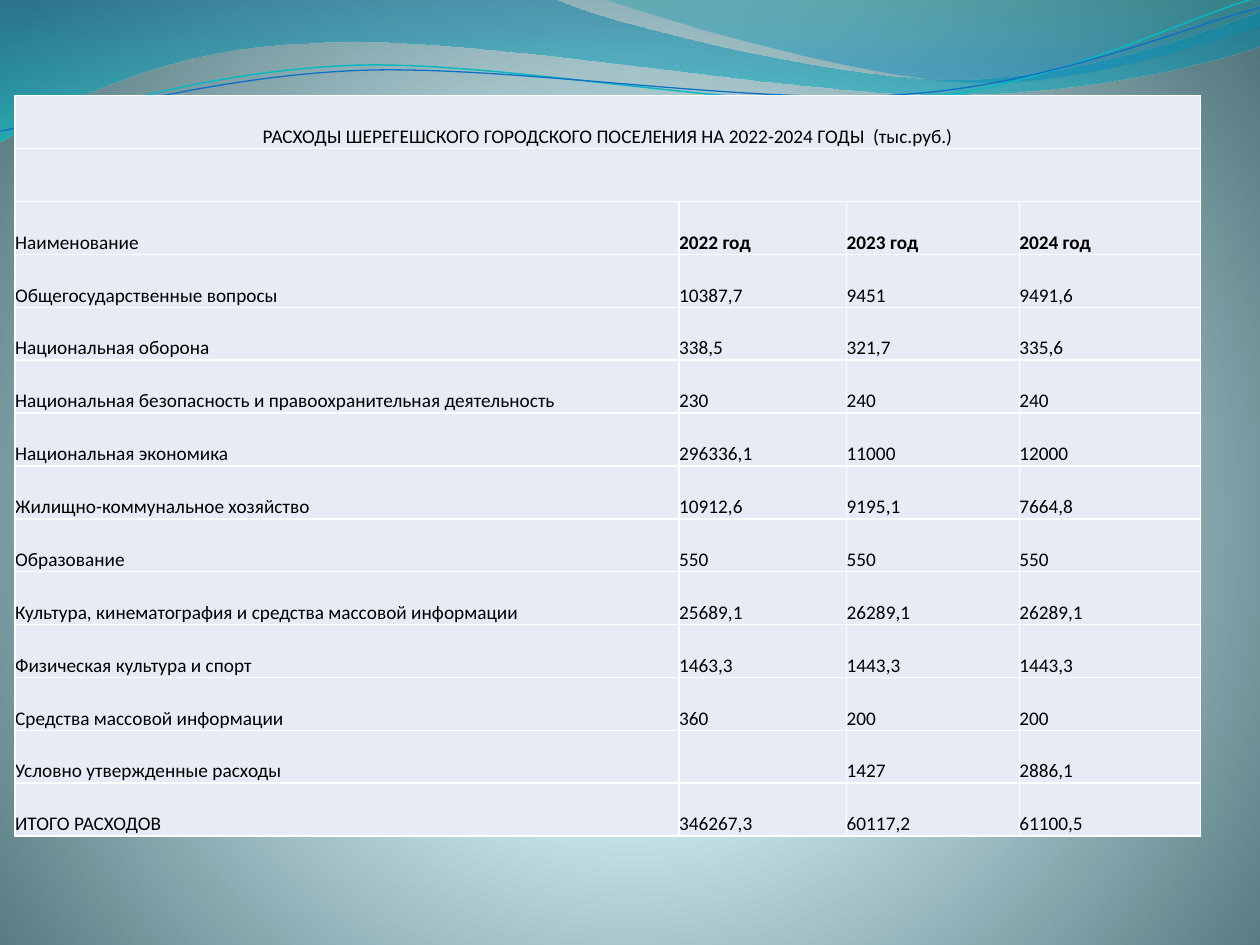
from dataclasses import dataclass
from math import cos, radians, sin
from typing import Optional

from lxml.etree import SubElement
from pptx import Presentation
from pptx.dml.color import RGBColor
from pptx.enum.text import MSO_ANCHOR, PP_ALIGN
from pptx.oxml.ns import qn
from pptx.util import Inches, Pt


@dataclass(frozen=True)
class Theme:
    font: str = "Calibri"
    size: float = 11
    ink: str = "000000"
    cell: str = "E7EBF5"
    rule: str = "FFFFFF"
    rule_width: float = 1
    # Gradient stops: position, colour, opacity (percent)
    back: tuple = ((0, "DEFBFF", 100), (25, "DDFAFF", 100), (100, "52767C", 100))
    swell: tuple = ((0, "0074A1", 45), (100, "00C6CF", 55))
    crest: tuple = ((0, "00A1A9", 30), (80, "008BBF", 45))
    teal: str = "0AB8BF"
    blue: str = "0F6FC6"


THEME = Theme()


@dataclass(frozen=True)
class Wave:
    """Start point, then steps: 2 numbers for a line, 6 for a Bezier curve."""
    start: tuple
    steps: tuple
    stops: tuple = ()
    line: Optional[str] = None
    width: float = 0
    turn: float = 0
    pivot: tuple = (0, 0)


FILLS = (
    Wave((0, 0), (
        (4.4, -0.01), (4.76, 0.17, 6.64, 0.63, 7.58, 0.63),
        (8.53, 0.63, 9.58, 0.26, 10, 0.09), (10.01, 0.36),
        (9.83, 0.44, 8.7, 0.76, 7.46, 0.75), (6.22, 0.75, 3.82, 0.28, 2.57, 0.34),
        (1.29, 0.36, 0.46, 0.83, -0.01, 1.13), (0, 0)), THEME.swell),
    Wave((4.79, -0.01), (
        (5.09, 0.11, 6.82, 0.62, 7.69, 0.65), (8.56, 0.69, 9.61, 0.32, 10, 0.21),
        (10, 0), (4.79, -0.01)), THEME.crest),
)
LINES = (
    Wave((0, 1.11), (
        (0.48, 0.93, 1.58, 0.57, 2.77, 0.52), (3.95, 0.47, 5.93, 0.89, 7.13, 0.8),
        (8.33, 0.71, 9.38, 0.15, 9.98, -0.02)),
        line=THEME.teal, width=0.85, turn=-2.7, pivot=(4.99, 0.57)),
    Wave((0, 1.04), (
        (0.47, 0.96, 1.64, 0.61, 2.83, 0.56), (4.03, 0.51, 5.97, 0.84, 7.17, 0.75),
        (8.36, 0.67, 9.41, 0.21, 10, 0.06)),
        line=THEME.blue, width=0.75, turn=-2.7, pivot=(5, 0.59)),
)

TITLE = "РАСХОДЫ ШЕРЕГЕШСКОГО ГОРОДСКОГО ПОСЕЛЕНИЯ НА 2022-2024 ГОДЫ  (тыс.руб.)"
HEAD = ("Наименование", "2022 год", "2023 год", "2024 год")
COSTS = (
    ("Общегосударственные вопросы", "10387,7", "9451", "9491,6"),
    ("Национальная оборона", "338,5", "321,7", "335,6"),
    ("Национальная безопасность и правоохранительная деятельность", "230", "240", "240"),
    ("Национальная экономика", "296336,1", "11000", "12000"),
    ("Жилищно-коммунальное хозяйство", "10912,6", "9195,1", "7664,8"),
    ("Образование", "550", "550", "550"),
    ("Культура, кинематография и средства массовой информации",
     "25689,1", "26289,1", "26289,1"),
    ("Физическая культура и спорт", "1463,3", "1443,3", "1443,3"),
    ("Средства массовой информации", "360", "200", "200"),
    ("Условно утвержденные расходы", "", "1427", "2886,1"),
    ("ИТОГО РАСХОДОВ", "346267,3", "60117,2", "61100,5"),
)
COLS = (5.27, 1.33, 1.37, 1.44)
ROW = 0.42


def shade(owner, stops: tuple, radial: bool = False) -> None:
    """Fill the slide background or a shape with a gradient."""
    owner.fill.gradient()
    grad = owner.fill._xPr.find(qn("a:gradFill"))
    grad.clear()
    grad.set("rotWithShape", "1")
    items = SubElement(grad, qn("a:gsLst"))
    for pos, tint, alpha in stops:
        stop = SubElement(items, qn("a:gs"), pos=str(pos * 1000))
        color = SubElement(stop, qn("a:srgbClr"), val=tint)
        if alpha < 100:
            SubElement(color, qn("a:alpha"), val=str(alpha * 1000))
    if radial:
        ring = SubElement(grad, qn("a:path"))
        ring.set("path", "circle")
        SubElement(ring, qn("a:fillToRect"), l="10000", t="110000", r="10000", b="100000")
    else:
        SubElement(grad, qn("a:lin"), ang="5400000", scaled="1")


def place(wave: Wave, step: tuple) -> list:
    """Give the points of a step in EMU, with the turn of the wave undone."""
    a, (cx, cy) = radians(-wave.turn), wave.pivot
    spots = []
    for x, y in zip(step[::2], step[1::2]):
        dx, dy = x - cx, y - cy
        spots.append((Inches(cx + dx * cos(a) - dy * sin(a)),
                      Inches(cy + dx * sin(a) + dy * cos(a))))
    return spots


def draw(shapes, wave: Wave) -> None:
    start = place(wave, wave.start)[0]
    steps = [place(wave, step) for step in wave.steps]
    pen = shapes.build_freeform(*start)
    pen.add_line_segments([step[-1] for step in steps], close=bool(wave.stops))
    shape = pen.convert_to_shape()
    # Bend the segments that have control points
    left, top = shape.left, shape.top
    for node, step in zip(list(shape._element.iter(qn("a:lnTo"))), steps):
        if len(step) == 3:
            node.tag = qn("a:cubicBezTo")
            node.clear()
            for x, y in step:
                SubElement(node, qn("a:pt"), x=str(x - left), y=str(y - top))
    shape.rotation = wave.turn
    shape.shadow.inherit = False
    if wave.stops:
        shade(shape, wave.stops)
        shape.line.fill.background()
    else:
        shape.fill.background()
        shape.line.color.rgb = RGBColor.from_string(wave.line)
        shape.line.width = Pt(wave.width)


def write(cell, text: str, *, bold: bool = False, align=PP_ALIGN.LEFT) -> None:
    cell.vertical_anchor = MSO_ANCHOR.BOTTOM
    if not text:
        return
    para = cell.text_frame.paragraphs[0]
    para.alignment = align
    run = para.add_run()
    run.text = text
    run.font.name, run.font.size, run.font.bold = THEME.font, Pt(THEME.size), bold
    run.font.color.rgb = RGBColor.from_string(THEME.ink)


def dress(cell) -> None:
    """Set the margins, borders and fill of a cell."""
    cell.margin_left = cell.margin_right = cell.margin_top = cell.margin_bottom = 0
    props = cell._tc.get_or_add_tcPr()
    for side in ("lnL", "lnR", "lnT", "lnB"):
        edge = SubElement(props, qn(f"a:{side}"), w=str(Pt(THEME.rule_width)))
        solid = SubElement(edge, qn("a:solidFill"))
        SubElement(solid, qn("a:srgbClr"), val=THEME.rule)
    cell.fill.solid()
    cell.fill.fore_color.rgb = RGBColor.from_string(THEME.cell)


def tabulate(slide) -> None:
    rows = ((TITLE,), ("",), HEAD, *COSTS)
    table = slide.shapes.add_table(
        len(rows), len(COLS), Inches(0.12), Inches(0.76),
        Inches(sum(COLS)), Inches(ROW * len(rows))).table
    table.first_row = table.horz_banding = False
    for col, width in zip(table.columns, COLS):
        col.width = Inches(width)
    for r, row in enumerate(rows):
        table.rows[r].height = Inches(ROW)
        for c in range(len(COLS)):
            dress(table.cell(r, c))
        wide = len(row) == 1
        if wide:
            table.cell(r, 0).merge(table.cell(r, len(COLS) - 1))
        for c, text in enumerate(row):
            write(table.cell(r, c), text, bold=row is HEAD and c > 0,
                  align=PP_ALIGN.CENTER if wide else PP_ALIGN.LEFT)


def main() -> None:
    deck = Presentation()
    deck.slide_width, deck.slide_height = Inches(10), Inches(7.5)
    slide = deck.slides.add_slide(deck.slide_layouts[6])
    # Background and waves
    shade(slide.background, THEME.back, radial=True)
    for wave in FILLS:
        draw(slide.shapes, wave)
    group = slide.shapes.add_group_shape()
    for wave in LINES:
        draw(group.shapes, wave)
    # Table of expenses
    tabulate(slide)
    deck.save("out.pptx")


if __name__ == "__main__":
    main()
